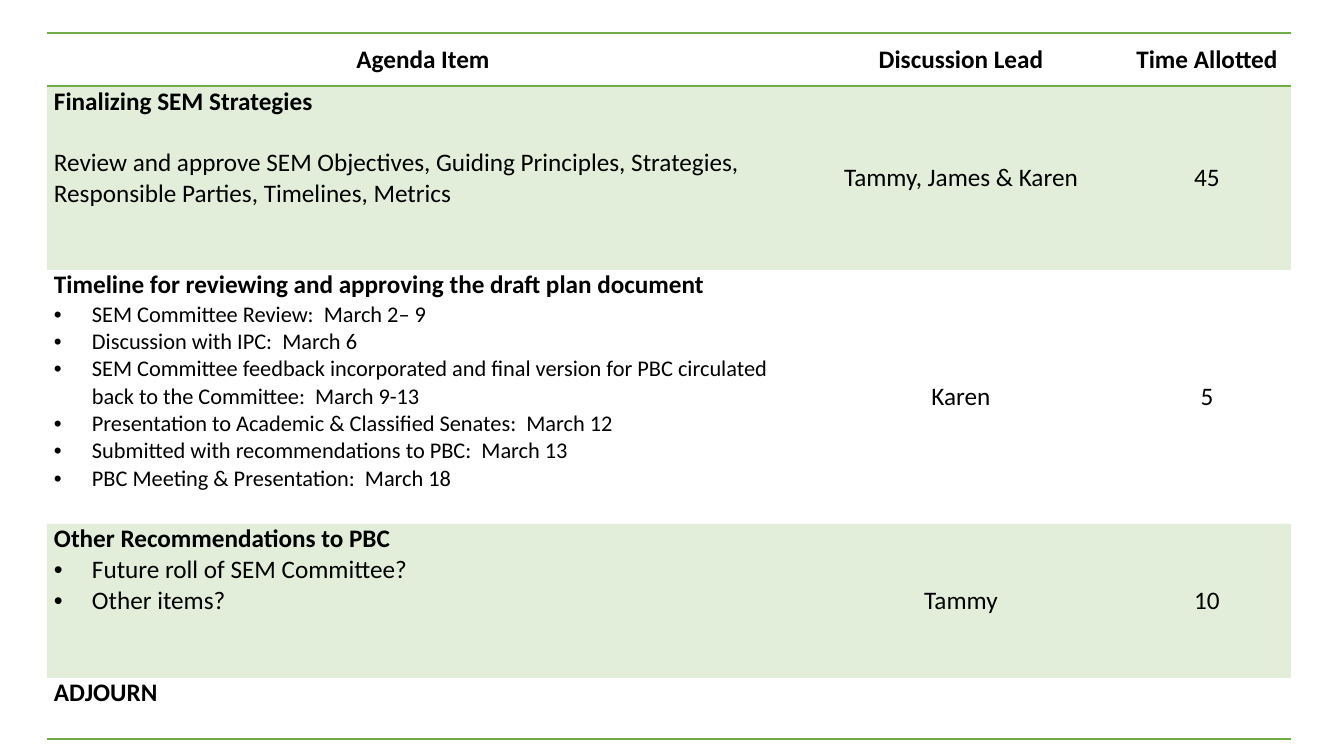
import lxml.etree
import pptx
import pptx.dml.color
import pptx.enum.text
import pptx.oxml.ns
import pptx.util

PX = 914400 / 100.8
THEME = {
    "font": "Calibri",
    "text": "000000",
    "green": "70AD47",
    "band_alpha": 20,
    "body": 18,
    "detail": 16,
    "rule": 1,
}
ALIGN = pptx.enum.text.PP_ALIGN
ANCHOR = pptx.enum.text.MSO_ANCHOR

# Paragraph looks: size, weight, bullet and space before
LOOKS = {
    "title": {"size": "body", "bold": True, "bullet": False, "before": 0},
    "plain": {"size": "body", "bold": False, "bullet": False, "before": 0},
    "apart": {"size": "body", "bold": False, "bullet": False, "before": 22},
    "point": {"size": "body", "bold": False, "bullet": True, "before": 0},
    "detail": {"size": "detail", "bold": False, "bullet": True, "before": 0},
}

# Each row: height, banded, ruled edges, and paragraphs per cell
AGENDA = [
    (53, False, ("lnT", "lnB"), [
        [("title", "Agenda Item")],
        [("title", "Discussion Lead")],
        [("title", "Time Allotted")],
    ]),
    (184, True, (), [
        [
            ("title", "Finalizing SEM Strategies"),
            ("apart", "Review and approve SEM Objectives, Guiding Principles, "
                      "Strategies, Responsible Parties, Timelines, Metrics"),
        ],
        [("plain", "Tammy, James & Karen")],
        [("plain", "45")],
    ]),
    (254, False, (), [
        [
            ("title", "Timeline for reviewing and approving the draft plan document"),
            ("detail", "SEM Committee Review:  March 2– 9"),
            ("detail", "Discussion with IPC:  March 6"),
            ("detail", "SEM Committee feedback incorporated and final version for "
                       "PBC circulated back to the Committee:  March 9-13"),
            ("detail", "Presentation to Academic & Classified Senates:  March 12"),
            ("detail", "Submitted with recommendations to PBC:  March 13"),
            ("detail", "PBC Meeting & Presentation:  March 18"),
        ],
        [("plain", "Karen")],
        [("plain", "5")],
    ]),
    (154, True, (), [
        [
            ("title", "Other Recommendations to PBC"),
            ("point", "Future roll of SEM Committee?"),
            ("point", "Other items?"),
        ],
        [("plain", "Tammy")],
        [("plain", "10")],
    ]),
    (61, False, ("lnB",), [[("title", "ADJOURN")], [], []]),
]
COLUMNS = [752, 324, 168]


def px(length):
    return pptx.util.Emu(round(length * PX))


def add_node(parent, name, **values):
    node = lxml.etree.SubElement(parent, pptx.oxml.ns.qn("a:" + name))
    for key, value in values.items():
        node.set(key, str(value))
    return node


# Deck and page
deck = pptx.Presentation()
deck.slide_width, deck.slide_height = px(1344), px(756)
page = deck.slides.add_slide(deck.slide_layouts[6])

# Agenda table, without the built-in styling
frame = page.shapes.add_table(
    len(AGENDA), len(COLUMNS), px(47), px(33),
    px(sum(COLUMNS)), px(sum(row[0] for row in AGENDA)))
table = frame.table
table.first_row = table.horz_banding = False
style = table._tbl.tblPr.find(pptx.oxml.ns.qn("a:tableStyleId"))
style.text = "{2D5ABB26-0587-4C30-8999-92F81FD0307C}"
for column, width in zip(table.columns, COLUMNS):
    column.width = px(width)

for row_index, (height, banded, edges, cells) in enumerate(AGENDA):
    table.rows[row_index].height = px(height)
    for column_index, paragraphs in enumerate(cells):
        cell = table.cell(row_index, column_index)
        centred = row_index == 0 or column_index > 0
        cell_format = {
            "margin_left": px(7), "margin_right": px(7),
            "margin_top": 0, "margin_bottom": 0,
            "vertical_anchor": ANCHOR.MIDDLE if centred else ANCHOR.TOP,
        }
        for name, value in cell_format.items():
            setattr(cell, name, value)

        # Green rules come before the fill in the cell properties
        properties = cell._tc.get_or_add_tcPr()
        for edge in edges:
            line = add_node(properties, edge, w=pptx.util.Pt(THEME["rule"]))
            add_node(add_node(line, "solidFill"), "srgbClr", val=THEME["green"])

        # Band tint
        if banded:
            tint = add_node(add_node(properties, "solidFill"), "srgbClr", val=THEME["green"])
            add_node(tint, "alpha", val=THEME["band_alpha"] * 1000)
        else:
            cell.fill.background()

        # Text
        for index, (look_name, text) in enumerate(paragraphs):
            look = LOOKS[look_name]
            box = cell.text_frame
            para = box.add_paragraph() if index else box.paragraphs[0]
            para.alignment = ALIGN.CENTER if centred else ALIGN.LEFT
            para.space_before = pptx.util.Pt(look["before"])
            if look["bullet"]:
                layout = para._p.get_or_add_pPr()
                layout.set("marL", str(px(38)))
                layout.set("indent", str(-px(38)))
                add_node(layout, "buFont", typeface="Arial")
                add_node(layout, "buChar", char="•")
            span = para.add_run()
            span.text = text
            span.font.color.rgb = pptx.dml.color.RGBColor.from_string(THEME["text"])
            span_format = {
                "name": THEME["font"],
                "size": pptx.util.Pt(THEME[look["size"]]),
                "bold": look["bold"],
            }
            for name, value in span_format.items():
                setattr(span.font, name, value)

deck.save("out.pptx")
